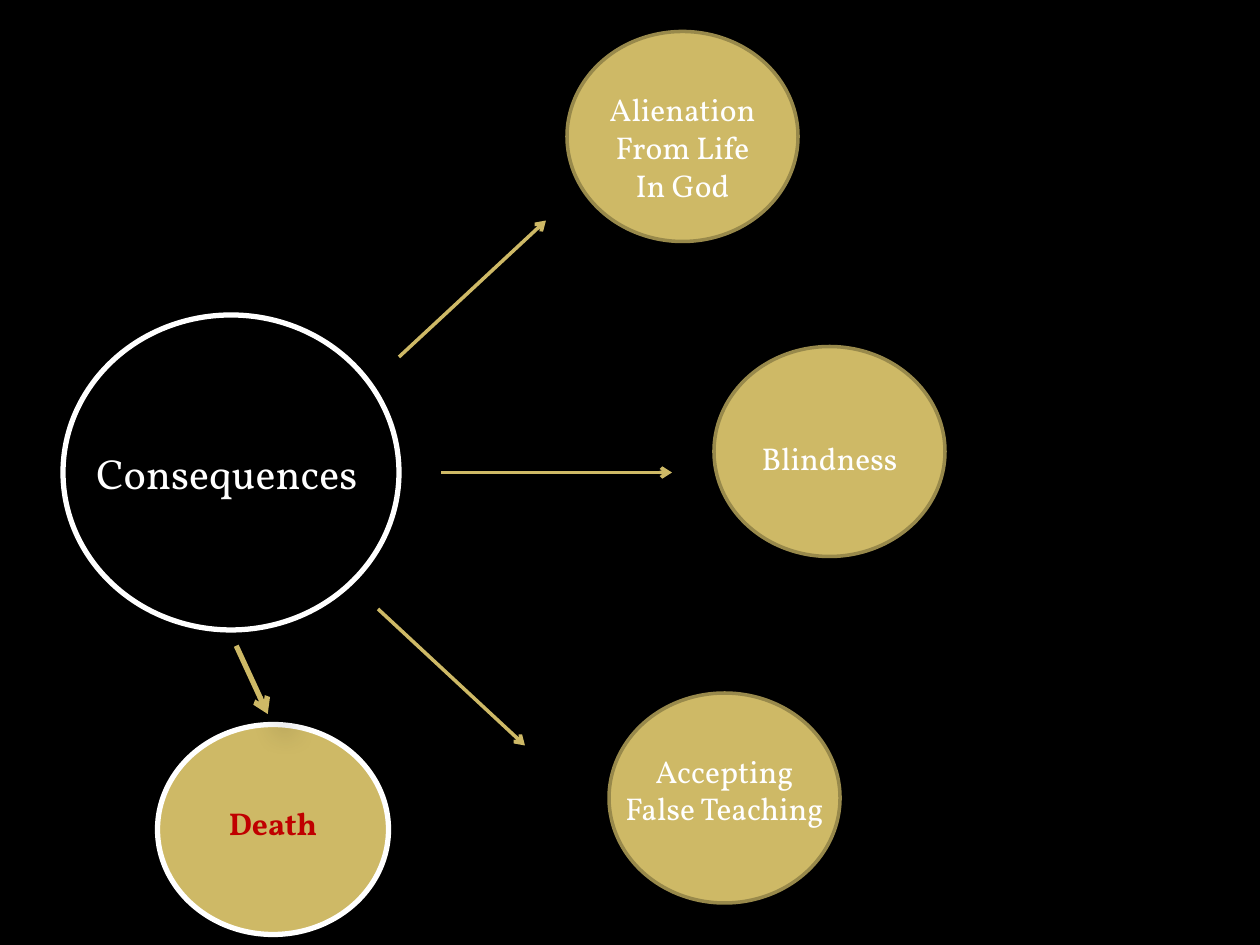
"""Build a slide that links consequences to four outcomes."""
from dataclasses import dataclass

from pptx import Presentation
from pptx.dml.color import RGBColor
from pptx.enum.shapes import MSO_CONNECTOR as Connector, MSO_SHAPE as Shape
from pptx.enum.text import MSO_AUTO_SIZE as AutoSize, PP_ALIGN as Align
from pptx.oxml import parse_xml
from pptx.oxml.ns import nsdecls
from pptx.slide import Slide
from pptx.util import Inches, Pt


@dataclass(frozen=True)
class Theme:
    black: str = "000000"
    white: str = "FFFFFF"
    gold: str = "CEB966"
    bronze: str = "98894B"
    red: str = "C00000"
    font: str = "Vollkorn"
    heading: int = 24
    body: int = 18
    thin: int = 2
    thick: int = 3


THEME = Theme()
CELLS_PER_INCH = 12


@dataclass(frozen=True)
class Circle:
    column: float
    row: float
    columns: float = 22
    rows: float = 20
    fill: str = THEME.gold
    outline: str = THEME.bronze
    weight: int = THEME.thin


@dataclass(frozen=True)
class Arrow:
    start: tuple[float, float]
    end: tuple[float, float]
    weight: int = THEME.thin
    shadow: bool = False


@dataclass(frozen=True)
class Label:
    text: str
    column: float
    row: float
    columns: float
    rows: float
    size: int = THEME.body
    color: str = THEME.white
    bold: bool = False
    align: Align = Align.CENTER


CIRCLES = [
    Circle(6, 30, 32, 30, THEME.black, THEME.white, THEME.thick),
    Circle(54, 3),
    Circle(68, 33),
    Circle(58, 66),
    Circle(15, 69, outline=THEME.white, weight=THEME.thick),
]
ARROWS = [
    Arrow((38, 34), (52, 21)),
    Arrow((42, 45), (64, 45)),
    Arrow((36, 58), (50, 71)),
    Arrow((22.5, 61.5), (25.5, 68), THEME.thick, shadow=True),
]
LABELS = [
    Label("Consequences", 8, 42, 29, 6, THEME.heading, align=Align.LEFT),
    Label("Alienation From Life In God", 56, 8, 18, 12),
    Label("Blindness", 71, 41.2, 16, 4.8),
    Label("Accepting False Teaching", 58, 71, 22, 12),
    Label("Death", 15, 76, 22, 4.8, color=THEME.red, bold=True),
]


def grid(*cells: float) -> list[int]:
    """Turn grid cells into lengths."""
    return [Inches(cell / CELLS_PER_INCH) for cell in cells]


def color(value: str) -> RGBColor:
    """Turn a hex value into a colour."""
    return RGBColor.from_string(value)


def draw_circle(page: Slide, circle: Circle) -> None:
    """Draw an outlined circle."""
    place = grid(circle.column, circle.row, circle.columns, circle.rows)
    oval = page.shapes.add_shape(Shape.OVAL, *place)
    oval.shadow.inherit = False
    oval.fill.solid()
    oval.fill.fore_color.rgb = color(circle.fill)
    oval.line.color.rgb = color(circle.outline)
    oval.line.width = Pt(circle.weight)


def draw_arrow(page: Slide, arrow: Arrow) -> None:
    """Draw a straight arrow, with a soft shadow if asked for."""
    line = page.shapes.add_connector(Connector.STRAIGHT, *grid(*arrow.start, *arrow.end))
    line.line.color.rgb = color(THEME.gold)
    line.line.width = Pt(arrow.weight)
    line.line._get_or_add_ln().append(parse_xml(f'<a:tailEnd {nsdecls("a")} type="arrow"/>'))
    shadow = (
        f'<a:outerShdw blurRad="{Pt(15)}" dist="{Pt(18)}" dir="2700000" rotWithShape="0">'
        f'<a:srgbClr val="{THEME.black}"><a:alpha val="26000"/></a:srgbClr></a:outerShdw>'
    ) if arrow.shadow else ""
    effects = parse_xml(f'<a:effectLst {nsdecls("a")}>{shadow}</a:effectLst>')
    line._element.spPr.append(effects)


def draw_label(page: Slide, label: Label) -> None:
    """Write a wrapped label."""
    place = grid(label.column, label.row, label.columns, label.rows)
    frame = page.shapes.add_textbox(*place).text_frame
    frame.word_wrap = True
    frame.auto_size = AutoSize.SHAPE_TO_FIT_TEXT
    para = frame.paragraphs[0]
    para.text = label.text
    para.alignment = label.align
    para.font.name = THEME.font
    para.font.size = Pt(label.size)
    para.font.bold = label.bold
    para.font.color.rgb = color(label.color)


def main() -> None:
    """Build and save the deck."""
    deck = Presentation()
    deck.slide_width, deck.slide_height = Inches(10), Inches(7.5)
    page = deck.slides.add_slide(deck.slide_layouts[6])
    page.background.fill.solid()
    page.background.fill.fore_color.rgb = color(THEME.black)
    for circle in CIRCLES:
        draw_circle(page, circle)
    for arrow in ARROWS:
        draw_arrow(page, arrow)
    for label in LABELS:
        draw_label(page, label)
    deck.save("out.pptx")


if __name__ == "__main__":
    main()
